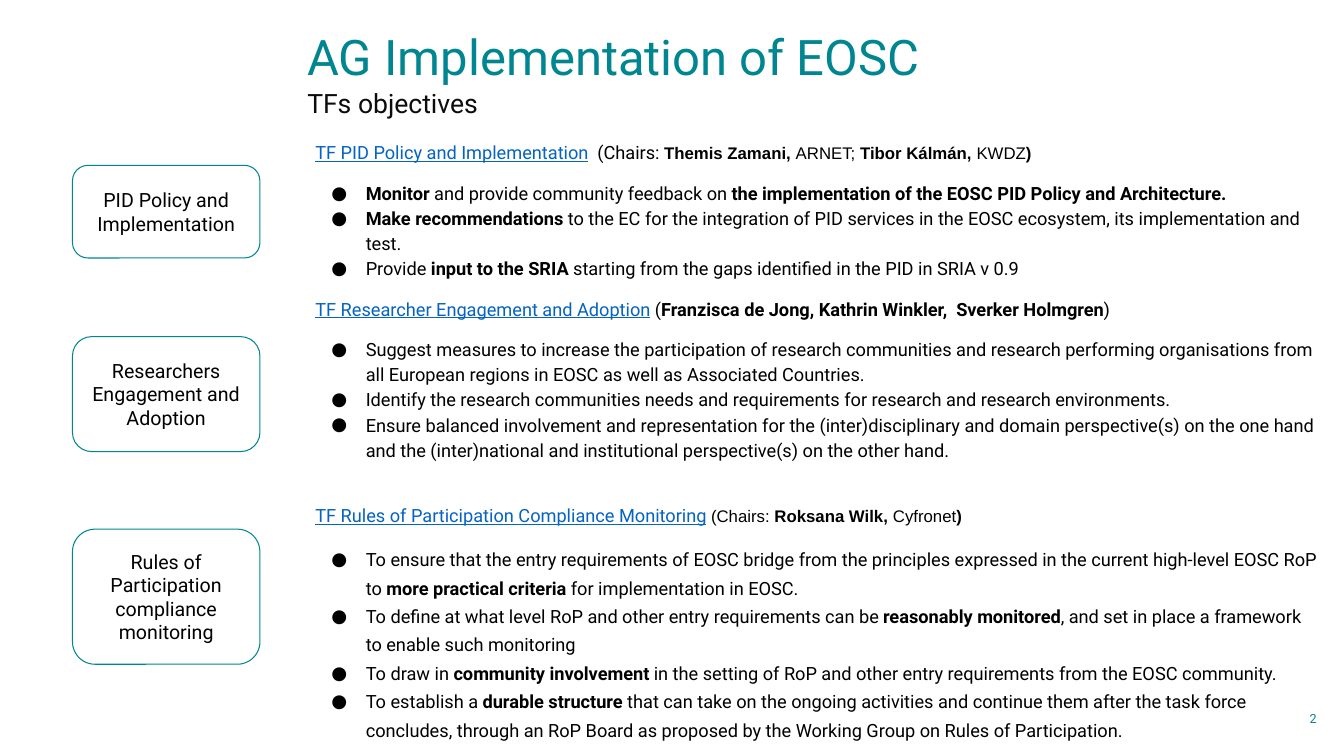
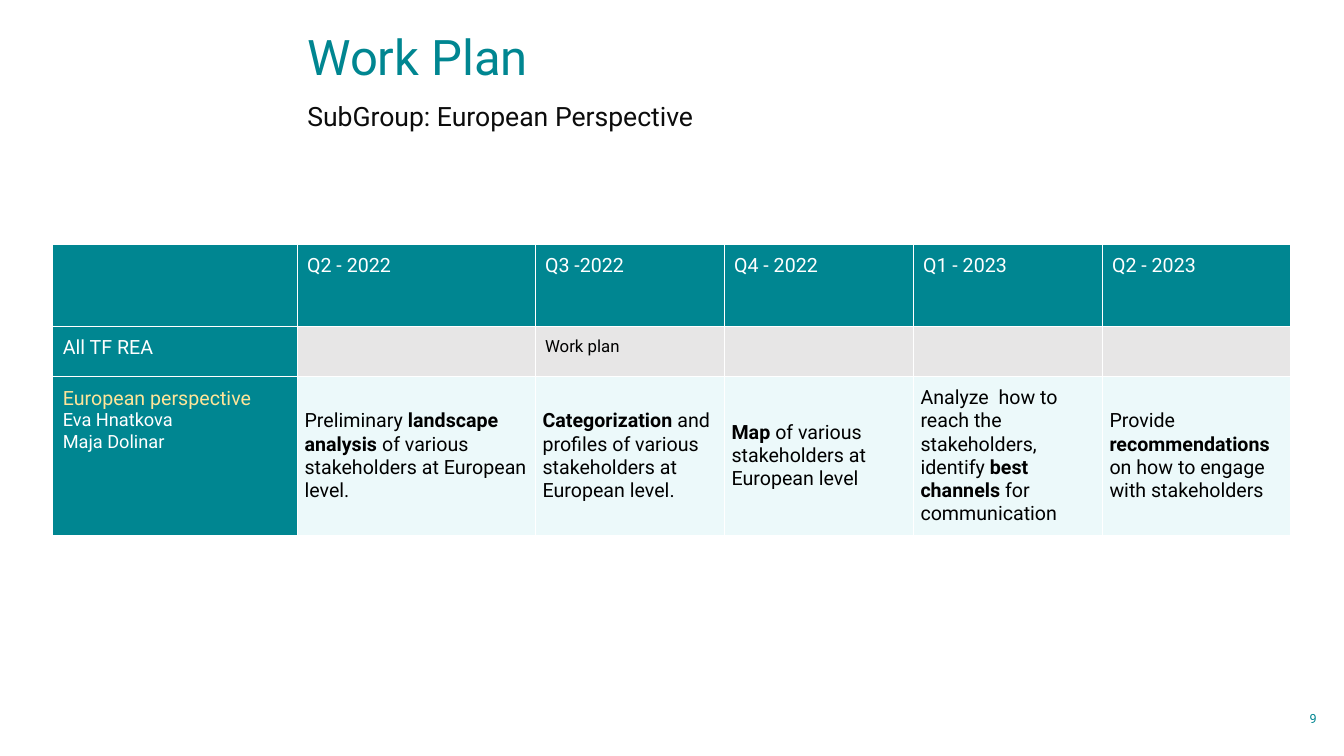
from dataclasses import dataclass
from typing import Optional

from lxml.etree import SubElement
from pptx import Presentation
from pptx.dml.color import RGBColor
from pptx.enum.shapes import MSO_SHAPE
from pptx.enum.text import MSO_ANCHOR, PP_ALIGN
from pptx.oxml.ns import qn
from pptx.util import Pt

COLORS = {
    "teal": "008691",
    "link": "0563C1",
    "black": "000000",
    "subtitle": "0C0C0C",
    "white": "FFFFFF",
    "gray": "E7E6E6",
    "pale": "ECF9FA",
    "yellow": "FFE599",
}


@dataclass(frozen=True)
class Run:
    text: str
    size: float = 13
    color: str = "black"
    font: str = "Roboto"
    bold: bool = False
    underline: bool = False


@dataclass(frozen=True)
class Para:
    runs: list[Run]
    line_spacing: Optional[float] = None
    space_before: float = 0
    bullet: bool = False
    align: PP_ALIGN = PP_ALIGN.LEFT


@dataclass(frozen=True)
class TaskForce:
    label: str
    label_top: float
    label_height: float
    link: str
    people: list[Run]
    objectives: list[str]
    heading_spacing: float
    heading_gap: float
    bullet_spacing: float


@dataclass(frozen=True)
class TableCell:
    paras: list[Para]
    fill: str
    anchor: MSO_ANCHOR = MSO_ANCHOR.TOP
    margin_x: float = 7.2
    margin_y: float = 7.2


def rgb(name: str) -> RGBColor:
    return RGBColor.from_string(COLORS[name])


def rich(text: str, **style) -> list[Run]:
    """Split text into runs; parts between asterisks are bold."""
    return [Run(part, bold=i % 2 == 1, **style)
            for i, part in enumerate(text.split("*")) if part]


def add_bullet(paragraph) -> None:
    props = paragraph._p.get_or_add_pPr()
    props.set("marL", str(Pt(36)))
    props.set("indent", str(Pt(-24.5)))
    color = SubElement(props, qn("a:buClr"))
    SubElement(color, qn("a:srgbClr")).set("val", COLORS["black"])
    SubElement(props, qn("a:buFont")).set("typeface", "Roboto")
    SubElement(props, qn("a:buChar")).set("char", "●")


def write(frame, paras: list[Para]) -> None:
    frame.word_wrap = True
    for i, para in enumerate(paras):
        paragraph = frame.paragraphs[0] if i == 0 else frame.add_paragraph()
        if para.bullet:
            add_bullet(paragraph)
        paragraph.alignment = para.align
        if para.line_spacing:
            paragraph.line_spacing = para.line_spacing
        if para.space_before:
            paragraph.space_before = Pt(para.space_before)
        for part in para.runs:
            run = paragraph.add_run()
            run.text = part.text
            run.font.name = part.font
            run.font.size = Pt(part.size)
            run.font.bold = part.bold
            run.font.underline = part.underline
            run.font.color.rgb = rgb(part.color)


def add_text(slide, left: float, top: float, width: float, height: float,
             paras: list[Para], anchor: MSO_ANCHOR = MSO_ANCHOR.TOP) -> None:
    frame = slide.shapes.add_textbox(Pt(left), Pt(top), Pt(width), Pt(height)).text_frame
    frame.vertical_anchor = anchor
    write(frame, paras)


def add_base_slide(deck, title: str, subtitle: str, subtitle_top: float, number: str):
    """Add a blank slide with the shared title, subtitle and page number."""
    slide = deck.slides.add_slide(deck.slide_layouts[6])
    add_text(slide, 212.4, 18.7, 697.7, 47.5,
             [Para([Run(title, 35, "teal")], 0.9)], MSO_ANCHOR.MIDDLE)
    add_text(slide, 212.4, subtitle_top, 697.7, 28.8,
             [Para([Run(subtitle, 19, "subtitle")], 0.9)])
    add_text(slide, 846, 505.4, 101.5, 15.8,
             [Para([Run(number, 9, "teal")], align=PP_ALIGN.RIGHT)], MSO_ANCHOR.MIDDLE)
    return slide


def add_label(slide, force: TaskForce) -> None:
    box = slide.shapes.add_shape(MSO_SHAPE.ROUNDED_RECTANGLE, Pt(51.8), Pt(force.label_top),
                                 Pt(133.9), Pt(force.label_height))
    box.shadow.inherit = False
    box.fill.background()
    box.line.color.rgb = rgb("teal")
    box.line.width = Pt(0.75)
    frame = box.text_frame
    frame.vertical_anchor = MSO_ANCHOR.MIDDLE
    frame.margin_left = frame.margin_right = Pt(7.2)
    frame.margin_top = frame.margin_bottom = Pt(7.2)
    write(frame, [Para([Run(force.label, 14)], align=PP_ALIGN.CENTER)])


def force_paras(force: TaskForce) -> list[Para]:
    heading = Para([Run(force.link, color="link", underline=True), *force.people],
                   force.heading_spacing, force.heading_gap)
    objectives = [Para(rich(text), force.bullet_spacing, 0 if i else 11, bullet=True)
                  for i, text in enumerate(force.objectives)]
    return [heading, *objectives]


def set_borders(cell, color: str, width: float) -> None:
    props = cell._tc.get_or_add_tcPr()
    for position, side in enumerate(("a:lnL", "a:lnR", "a:lnT", "a:lnB")):
        line = props.makeelement(qn(side), {"w": str(Pt(width))})
        fill = SubElement(line, qn("a:solidFill"))
        SubElement(fill, qn("a:srgbClr")).set("val", COLORS[color])
        props.insert(position, line)


def add_plan(slide, rows: list[list[TableCell]], widths: list[float],
             heights: list[float]) -> None:
    table = slide.shapes.add_table(len(rows), len(widths), Pt(37.7), Pt(174.5),
                                   Pt(sum(widths)), Pt(sum(heights))).table
    table.first_row = table.horz_banding = False
    for column, width in zip(table.columns, widths):
        column.width = Pt(width)
    for row, height, contents in zip(table.rows, heights, rows):
        row.height = Pt(height)
        for cell, content in zip(row.cells, contents):
            cell.fill.solid()
            cell.fill.fore_color.rgb = rgb(content.fill)
            cell.vertical_anchor = content.anchor
            cell.margin_left = cell.margin_right = Pt(content.margin_x)
            cell.margin_top = cell.margin_bottom = Pt(content.margin_y)
            set_borders(cell, "white", 0.75)
            write(cell.text_frame, content.paras)


TASK_FORCES = [
    TaskForce(
        "PID Policy and Implementation", 118.1, 66.2,
        "TF PID Policy and Implementation",
        [Run("  (Chairs: "),
         *rich("*Themis Zamani, *ARNET; *Tibor Kálmán, *KWDZ*)*", size=12, font="Arial")],
        ["*Monitor* and provide community feedback on "
         "*the implementation of the EOSC PID Policy and Architecture.*",
         "*Make recommendations* to the EC for the integration of PID services in the EOSC "
         "ecosystem, its implementation and test.",
         "Provide *input to the SRIA* starting from the gaps identified in the PID in SRIA v 0.9"],
        1.3, 0, 1.15),
    TaskForce(
        "Researchers Engagement and Adoption", 240.5, 82.1,
        "TF Researcher Engagement and Adoption",
        [Run(" ", 12, font="Arial"),
         *rich("(*Franzisca de Jong, Kathrin Winkler,  Sverker Holmgren*)")],
        ["Suggest measures to increase the participation of research communities and research "
         "performing organisations from all European regions in EOSC as well as Associated "
         "Countries.",
         "Identify the research communities needs and requirements for research and research "
         "environments.",
         "Ensure balanced involvement and representation for the (inter)disciplinary and domain "
         "perspective(s) on the one hand and the (inter)national and institutional "
         "perspective(s) on the other hand."],
        1.15, 11, 1.15),
    TaskForce(
        "Rules of Participation compliance monitoring", 378, 96.5,
        "TF Rules of Participation Compliance Monitoring",
        rich(" (Chairs:* Roksana Wilk, *Cyfronet*)*", size=12, font="Arial"),
        ["To ensure that the entry requirements of EOSC bridge from the principles expressed in "
         "the current high-level EOSC RoP to *more practical criteria* for implementation in "
         "EOSC.",
         "To define at what level RoP and other entry requirements can be "
         "*reasonably monitored*, and set in place a framework to enable such monitoring",
         "To draw in *community involvement* in the setting of RoP and other entry requirements "
         "from the EOSC community.",
         "To establish a *durable structure* that can take on the ongoing activities and "
         "continue them after the task force concludes, through an RoP Board as proposed by the "
         "Working Group on Rules of Participation."],
        1.15, 29, 1.3),
]

QUARTERS = ["Q2 - 2022", "Q3 -2022", "Q4 - 2022", "Q1 - 2023", "Q2 - 2023"]
ALL_MEMBERS_STEPS = ["", "Work plan", "", "", ""]
EUROPEAN_STEPS = [
    "Preliminary *landscape analysis* of various stakeholders at European level.",
    "*Categorization* and profiles of various stakeholders at European level.",
    "*Map *of various stakeholders at European level",
    "Analyze  how to reach the stakeholders, identify *best channels* for communication",
    "Provide *recommendations *on how to engage with stakeholders",
]


def header_cell(text: str) -> TableCell:
    return TableCell([Para(rich(text, size=14, color="white"))], "teal")


def plan_rows() -> list[list[TableCell]]:
    team = TableCell([Para([Run("European perspective", 14, "yellow")]),
                      Para([Run("Eva Hnatkova", color="white")]),
                      Para([Run("Maja Dolinar", color="white")])], "teal")
    return [
        [header_cell(text) for text in ["", *QUARTERS]],
        [header_cell("All TF REA"),
         *(TableCell([Para(rich(step, size=12))], "gray") for step in ALL_MEMBERS_STEPS)],
        [team,
         *(TableCell([Para(rich(step, size=14))], "pale", MSO_ANCHOR.MIDDLE, 5.4, 0)
           for step in EUROPEAN_STEPS)],
    ]


def main() -> None:
    deck = Presentation()
    deck.slide_width, deck.slide_height = Pt(960), Pt(540)

    objectives = add_base_slide(deck, "AG Implementation of EOSC", "TFs objectives", 61.2, "2")
    add_text(objectives, 218.2, 92.9, 729.4, 412.6,
             [para for force in TASK_FORCES for para in force_paras(force)])
    for force in TASK_FORCES:
        add_label(objectives, force)

    work_plan = add_base_slide(deck, "Work Plan", "SubGroup: European Perspective", 70.6, "9")
    add_plan(work_plan, plan_rows(), [174.5, 170] + [135] * 4, [58.7, 35.3, 113])

    deck.save("out.pptx")


if __name__ == "__main__":
    main()
